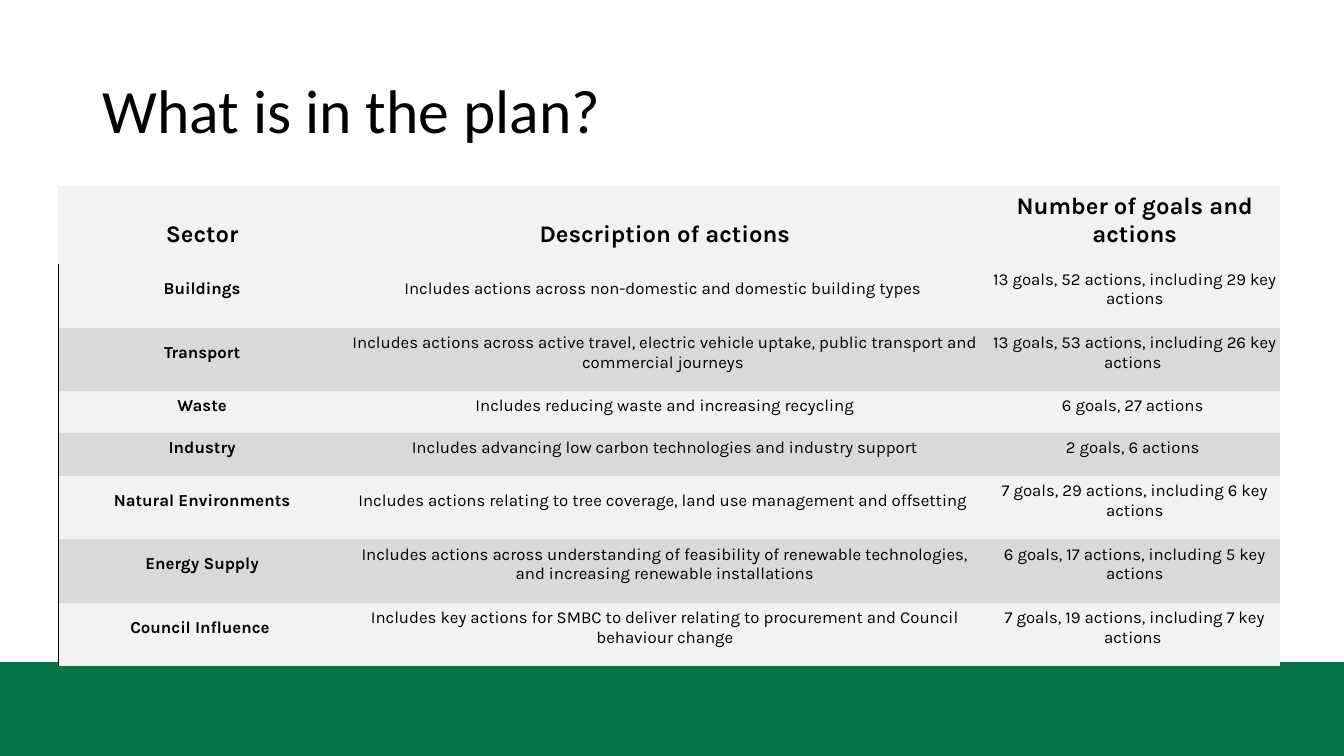
from lxml import etree
from pptx import Presentation
from pptx.dml.color import RGBColor
from pptx.enum.shapes import MSO_SHAPE
from pptx.enum.text import MSO_ANCHOR, PP_ALIGN
from pptx.oxml.ns import qn
from pptx.util import Emu, Pt

RECTANGLE = MSO_SHAPE.RECTANGLE
MIDDLE, BOTTOM = MSO_ANCHOR.MIDDLE, MSO_ANCHOR.BOTTOM
LEFT, CENTER = PP_ALIGN.LEFT, PP_ALIGN.CENTER

BLACK = RGBColor(0x00, 0x00, 0x00)
GREEN = RGBColor(0x07, 0x74, 0x4A)
LIGHT_GREY = RGBColor(0xF2, 0xF2, 0xF2)
MID_GREY = RGBColor(0xD9, 0xD9, 0xD9)

EMU_PER_PX = 9144  # 100 px to the inch
SLIDE_WIDTH, SLIDE_HEIGHT = 1333, 750
PLAIN_TABLE_STYLE = "{2D5ABB26-0587-4C30-8999-92F81FD0307C}"

COLUMN_WIDTHS = [280, 638, 294]
ROW_HEIGHTS = [77, 63, 63, 42, 42, 63, 63, 63]
PLAN_ROWS = [
    ("Sector", "Description of actions", "Number of goals and actions"),
    ("Buildings",
     "Includes actions across non-domestic and domestic building types ",
     "13 goals, 52 actions, including 29 key actions"),
    ("Transport",
     "Includes actions across active travel, electric vehicle uptake, "
     "public transport and commercial journeys ",
     "13 goals, 53 actions, including 26 key actions "),
    ("Waste",
     "Includes reducing waste and increasing recycling",
     "6 goals, 27 actions "),
    ("Industry",
     "Includes advancing low carbon technologies and industry support",
     "2 goals, 6 actions "),
    ("Natural Environments",
     "Includes actions relating to tree coverage, land use management "
     "and offsetting ",
     "7 goals, 29 actions, including 6 key actions"),
    ("Energy Supply",
     "Includes actions across understanding of feasibility of renewable "
     "technologies, and increasing renewable installations",
     "6 goals, 17 actions, including 5 key actions"),
    ("Council Influence ",
     "Includes key actions for SMBC to deliver relating to procurement "
     "and Council behaviour change",
     "7 goals, 19 actions, including 7 key actions "),
]


def px(length):
    return Emu(length * EMU_PER_PX)


def write_text(frame, text, *, font, size, bold=False, align=CENTER, spacing=1.0):
    paragraph = frame.paragraphs[0]
    paragraph.alignment = align
    paragraph.line_spacing = spacing
    run = paragraph.add_run()
    run.text = text
    run.font.name = font
    run.font.size = Pt(size)
    run.font.bold = bold
    run.font.color.rgb = BLACK


def add_footer_band(slide):
    band = slide.shapes.add_shape(RECTANGLE, 0, px(657), px(SLIDE_WIDTH), px(93))
    band.shadow.inherit = False
    band.fill.solid()
    band.fill.fore_color.rgb = GREEN
    band.line.fill.background()


def set_title(slide, text):
    title = slide.shapes.title
    title.left, title.top = px(92), px(40)
    title.width, title.height = px(1150), px(145)
    title.text_frame.vertical_anchor = MIDDLE
    write_text(title.text_frame, text, font="Calibri", size=44,
               align=LEFT, spacing=0.9)


def add_left_border(cell):
    """Draw a one-point black line; borders come before the fill in tcPr."""
    properties = cell._tc.get_or_add_tcPr()
    border = etree.Element(qn("a:lnL"), w=str(Pt(1)))
    fill = etree.SubElement(border, qn("a:solidFill"))
    etree.SubElement(fill, qn("a:srgbClr"), val=str(BLACK))
    properties.insert(0, border)


def fill_cell(cell, text, row, column):
    is_header = row == 0
    cell.margin_left, cell.margin_top = px(7), px(2)
    cell.margin_right, cell.margin_bottom = px(2), px(15)
    cell.vertical_anchor = BOTTOM if is_header else MIDDLE
    cell.fill.solid()
    cell.fill.fore_color.rgb = MID_GREY if row and row % 2 == 0 else LIGHT_GREY
    write_text(cell.text_frame, text, font="Karla", size=17 if is_header else 12,
               bold=is_header or column == 0)
    if column == 0 and not is_header:
        add_left_border(cell)


def add_plan_table(slide):
    frame = slide.shapes.add_table(
        len(PLAN_ROWS), len(COLUMN_WIDTHS), px(58), px(185),
        px(sum(COLUMN_WIDTHS)), px(sum(ROW_HEIGHTS)))
    table = frame.table
    table.horz_banding = False
    next(frame.element.iter(qn("a:tableStyleId"))).text = PLAIN_TABLE_STYLE
    for column, width in zip(table.columns, COLUMN_WIDTHS):
        column.width = px(width)
    for row, height in zip(table.rows, ROW_HEIGHTS):
        row.height = px(height)
    for row, texts in enumerate(PLAN_ROWS):
        for column, text in enumerate(texts):
            fill_cell(table.cell(row, column), text, row, column)


def main():
    presentation = Presentation()
    presentation.slide_width = px(SLIDE_WIDTH)
    presentation.slide_height = px(SLIDE_HEIGHT)
    title_only = presentation.slide_layouts[5]
    slide = presentation.slides.add_slide(title_only)
    add_footer_band(slide)
    set_title(slide, "What is in the plan?")
    add_plan_table(slide)
    presentation.save("out.pptx")


if __name__ == "__main__":
    main()
